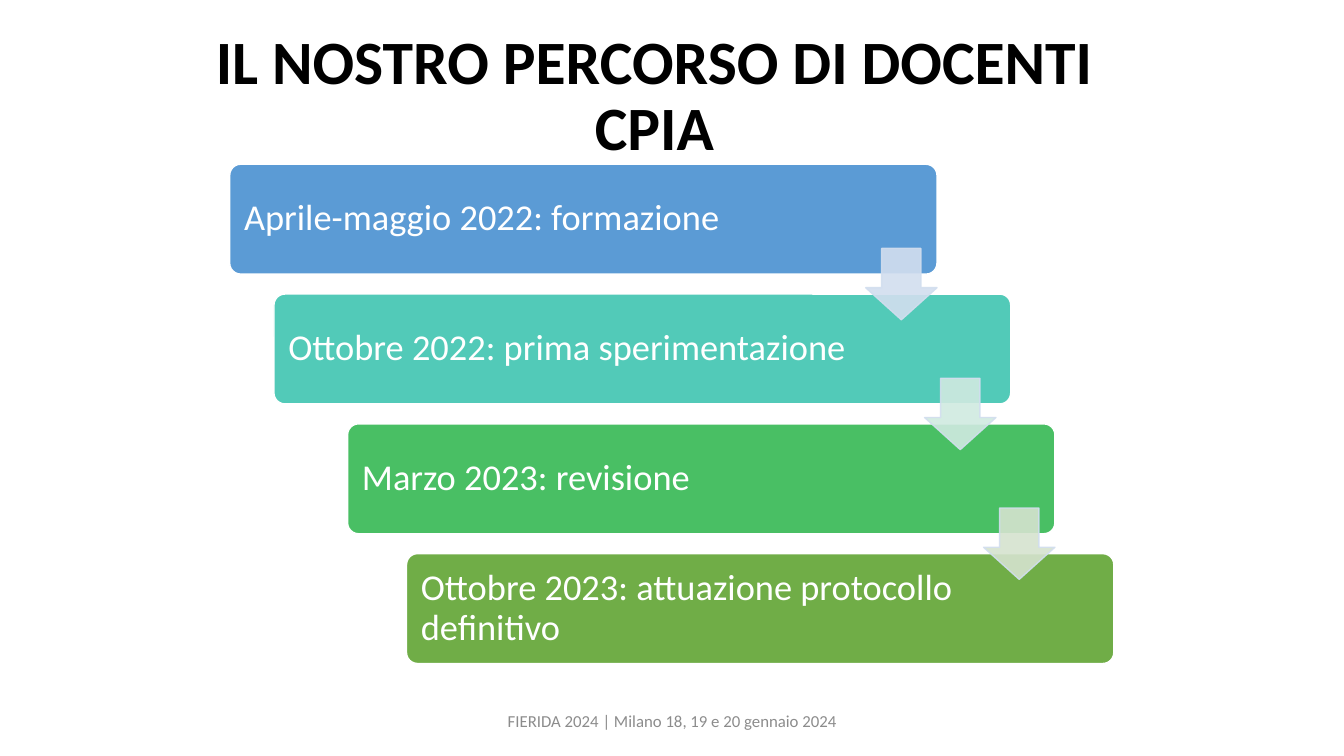
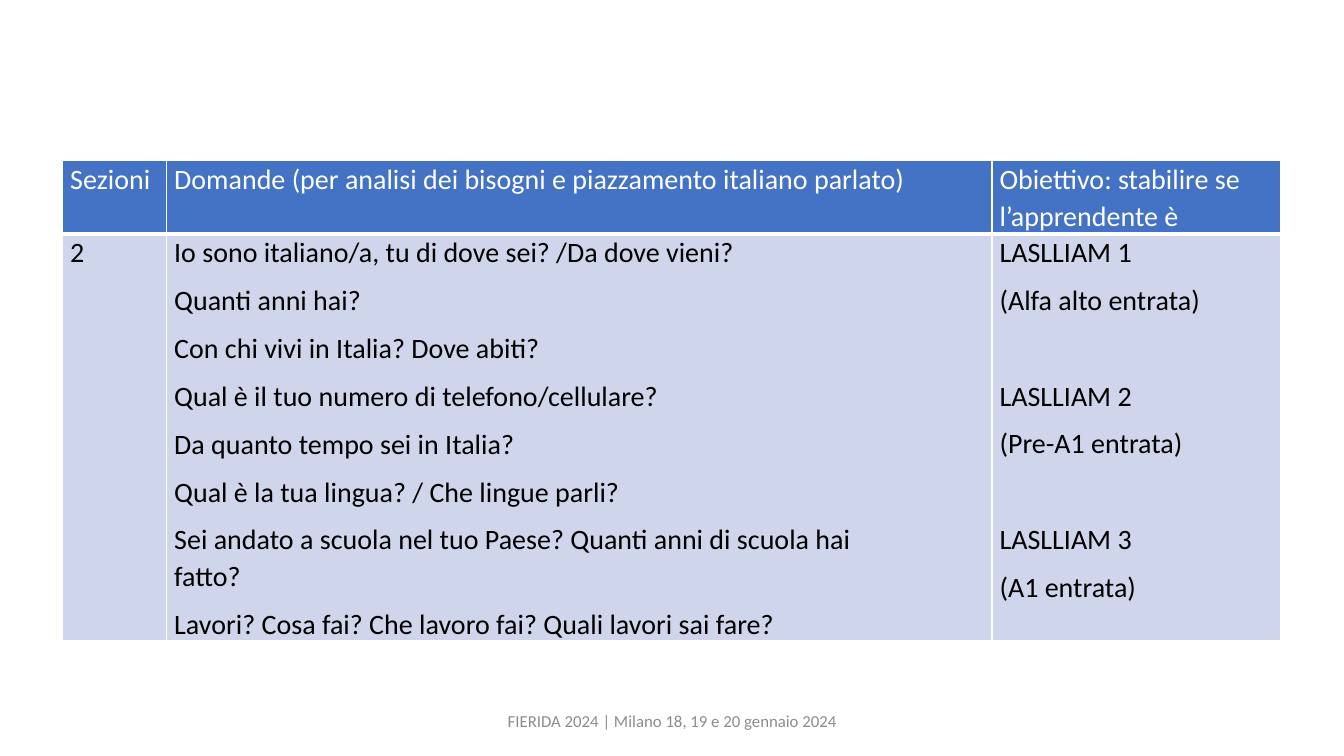
from dataclasses import dataclass

from lxml.etree import SubElement
from pptx import Presentation
from pptx.dml.color import RGBColor
from pptx.enum.shapes import MSO_SHAPE
from pptx.enum.text import MSO_ANCHOR, MSO_AUTO_SIZE, PP_ALIGN
from pptx.oxml.ns import qn
from pptx.util import Cm, Pt


@dataclass(frozen=True)
class Theme:
    """Colours, font and type sizes of the deck."""
    font: str = "Calibri"
    black: str = "000000"
    white: str = "FFFFFF"
    footer: str = "8C8C8C"
    header_fill: str = "4472C4"
    body_fill: str = "CFD5EA"
    arrow_line: str = "D2DEEF"
    card_fills: tuple = ("5B9BD5", "52CAB8", "49BF64", "70AD47")
    arrow_fills: tuple = ("D2DEEF", "D0EAE1", "D5E3CF")
    arrow_opacity: int = 90
    title_size: int = 44
    card_size: int = 26
    table_size: int = 20
    footer_size: int = 12


@dataclass(frozen=True)
class Box:
    """A rectangle in centimetres."""
    left: float
    top: float
    width: float
    height: float

    def place(self):
        """Return the four lengths in the order that shapes take them."""
        return Cm(self.left), Cm(self.top), Cm(self.width), Cm(self.height)


THEME = Theme()
FOOTER = "FIERIDA 2024 | Milano 18, 19 e 20 gennaio 2024"
FOOTER_BOX = Box(11.23, 17.65, 11.43, 1.02)
TITLE_BOX = Box(3.63, 0.66, 25.73, 2.54)
STEPS_BOX = Box(5.79, 4.14, 22.28, 12.58)
TABLE_BOX = Box(1.58, 4.04, 30.7, 12.1)

STEPS = (
    "Aprile-maggio 2022: formazione",
    "Ottobre 2022: prima sperimentazione",
    "Marzo 2023: revisione",
    "Ottobre 2023: attuazione protocollo definitivo",
)
HEADERS = (
    "Sezioni",
    "Domande (per analisi dei bisogni e piazzamento italiano parlato)",
    "Obiettivo: stabilire se l’apprendente è",
)
QUESTIONS = (
    "Io sono italiano/a, tu di dove sei? /Da dove vieni?",
    "Quanti anni hai?",
    "Con chi vivi in Italia? Dove abiti?",
    "Qual è il tuo numero di telefono/cellulare?",
    "Da quanto tempo sei in Italia?",
    "Qual è la tua lingua? / Che lingue parli?",
    "Sei andato a scuola nel tuo Paese? Quanti anni di scuola hai fatto?",
    "Lavori? Cosa fai? Che lavoro fai? Quali lavori sai fare?",
)
LEVELS = (
    ("LASLLIAM 1", "(Alfa alto entrata)"),
    ("LASLLIAM 2", "(Pre-A1 entrata)"),
    ("LASLLIAM 3", "(A1 entrata)"),
)


def write(para, text, size, color, bold=False, align=PP_ALIGN.LEFT,
          spacing=1.0, before=0, after=0):
    """Put formatted text into a paragraph."""
    para.alignment = align
    para.line_spacing = spacing
    para.space_before, para.space_after = Pt(before), Pt(after)
    span = para.add_run()
    span.text = text
    span.font.name = THEME.font
    span.font.size = Pt(size)
    span.font.bold = bold
    span.font.color.rgb = RGBColor.from_string(color)


def add_footer(page, box):
    """Place the footer line."""
    frame = page.shapes.add_textbox(*box.place()).text_frame
    frame.word_wrap = True
    frame.vertical_anchor = MSO_ANCHOR.MIDDLE
    write(frame.paragraphs[0], FOOTER, THEME.footer_size, THEME.footer,
          align=PP_ALIGN.CENTER)


def set_title(page, text, box):
    """Move and format the title placeholder."""
    title = page.shapes.title
    title.left, title.top, title.width, title.height = box.place()
    frame = title.text_frame
    frame.word_wrap = True
    frame.auto_size = MSO_AUTO_SIZE.NONE
    frame.vertical_anchor = MSO_ANCHOR.TOP
    write(frame.paragraphs[0], text, THEME.title_size, THEME.black,
          bold=True, align=PP_ALIGN.CENTER, spacing=0.9)


def add_preset(page, kind, box, fill, line, adjustments):
    """Add a flat preset shape with a thin outline."""
    shape = page.shapes.add_shape(kind, *box.place())
    shape.shadow.inherit = False
    shape.fill.solid()
    shape.fill.fore_color.rgb = RGBColor.from_string(fill)
    shape.line.color.rgb = RGBColor.from_string(line)
    shape.line.width = Pt(1)
    for index, value in enumerate(adjustments):
        shape.adjustments[index] = value
    return shape


def add_card(page, box, text, fill):
    """Add one step card, keeping its right end free for the arrow."""
    card = add_preset(page, MSO_SHAPE.ROUNDED_RECTANGLE, box, fill,
                      THEME.white, (0.1,))
    frame = card.text_frame
    frame.word_wrap = True
    frame.vertical_anchor = MSO_ANCHOR.MIDDLE
    frame.margin_left = frame.margin_top = frame.margin_bottom = Cm(0.28)
    frame.margin_right = Cm(3.5)
    write(frame.paragraphs[0], text, THEME.card_size, THEME.white, spacing=0.9)


def add_arrow(page, box, fill):
    """Add one translucent down arrow."""
    arrow = add_preset(page, MSO_SHAPE.DOWN_ARROW, box, fill,
                       THEME.arrow_line, (0.55, 0.45))
    for color in arrow.element.spPr.iter(qn("a:srgbClr")):
        SubElement(color, qn("a:alpha"), val=str(THEME.arrow_opacity * 1000))


def add_staircase(page, box):
    """Place the step cards down a diagonal, with arrows over the gaps."""
    base = 0.8 * box.width
    widths = (base, box.width / 1.2, base, base)
    height = 0.22 * box.height
    shift = (box.width - base) / (len(STEPS) - 1)
    pitch = (box.height - height) / (len(STEPS) - 1)
    side = 0.65 * height
    for index, (text, width, fill) in enumerate(
            zip(STEPS, widths, THEME.card_fills)):
        left = box.left + index * shift - (width - base) / 2
        add_card(page, Box(left, box.top + index * pitch, width, height),
                 text, fill)
    for index, fill in enumerate(THEME.arrow_fills):
        left = box.left + index * shift + base - side
        top = box.top + index * pitch + (height + pitch - side) / 2
        add_arrow(page, Box(left, top, side, side), fill)


def style_cell(cell, fill, bottom=1):
    """Set the insets, white borders and fill of a cell."""
    cell.margin_left = cell.margin_right = Cm(0.19)
    cell.margin_top = cell.margin_bottom = 0
    properties = cell._tc.get_or_add_tcPr()
    for side, width in (("L", 1), ("R", 1), ("T", 1), ("B", bottom)):
        line = SubElement(properties, qn(f"a:ln{side}"), w=str(Pt(width)))
        solid = SubElement(line, qn("a:solidFill"))
        SubElement(solid, qn("a:srgbClr"), val=THEME.white)
    cell.fill.solid()
    cell.fill.fore_color.rgb = RGBColor.from_string(fill)


def fill_cell(cell, groups, color):
    """Write groups of paragraphs, leaving one line between groups."""
    frame = cell.text_frame
    para = frame.paragraphs[0]
    for number, group in enumerate(groups):
        for index, text in enumerate(group):
            if number or index:
                para = frame.add_paragraph()
            gap = 34 if number and not index else 0
            write(para, text, THEME.table_size, color, spacing=1.07,
                  before=gap, after=8)


def add_question_table(page, box):
    """Place the table of questions and entry levels."""
    table = page.shapes.add_table(2, len(HEADERS), *box.place()).table
    table.horz_banding = False
    header_height = 1.85
    table.rows[0].height = Cm(header_height)
    table.rows[1].height = Cm(box.height - header_height)
    narrow, wide = 2.62, 20.8
    widths = (narrow, wide, box.width - narrow - wide)
    bodies = ((("2",),), (QUESTIONS,), LEVELS)
    for index, (width, header, body) in enumerate(
            zip(widths, HEADERS, bodies)):
        table.columns[index].width = Cm(width)
        top, bottom = table.cell(0, index), table.cell(1, index)
        style_cell(top, THEME.header_fill, bottom=3)
        style_cell(bottom, THEME.body_fill)
        fill_cell(top, ((header,),), THEME.white)
        fill_cell(bottom, body, THEME.black)
    table.cell(1, 1).margin_right = Cm(2.5)


def build_path_slide(deck):
    """Build the slide with the teachers' path."""
    page = deck.slides.add_slide(deck.slide_layouts.get_by_name("Title Only"))
    add_footer(page, FOOTER_BOX)
    set_title(page, "IL NOSTRO PERCORSO DI DOCENTI CPIA", TITLE_BOX)
    add_staircase(page, STEPS_BOX)


def build_table_slide(deck):
    """Build the slide with the interview questions."""
    page = deck.slides.add_slide(deck.slide_layouts.get_by_name("Blank"))
    add_footer(page, FOOTER_BOX)
    add_question_table(page, TABLE_BOX)


def main():
    """Build and save the deck."""
    deck = Presentation()
    deck.slide_width, deck.slide_height = Cm(33.87), Cm(19.05)
    build_path_slide(deck)
    build_table_slide(deck)
    deck.save("out.pptx")


if __name__ == "__main__":
    main()
